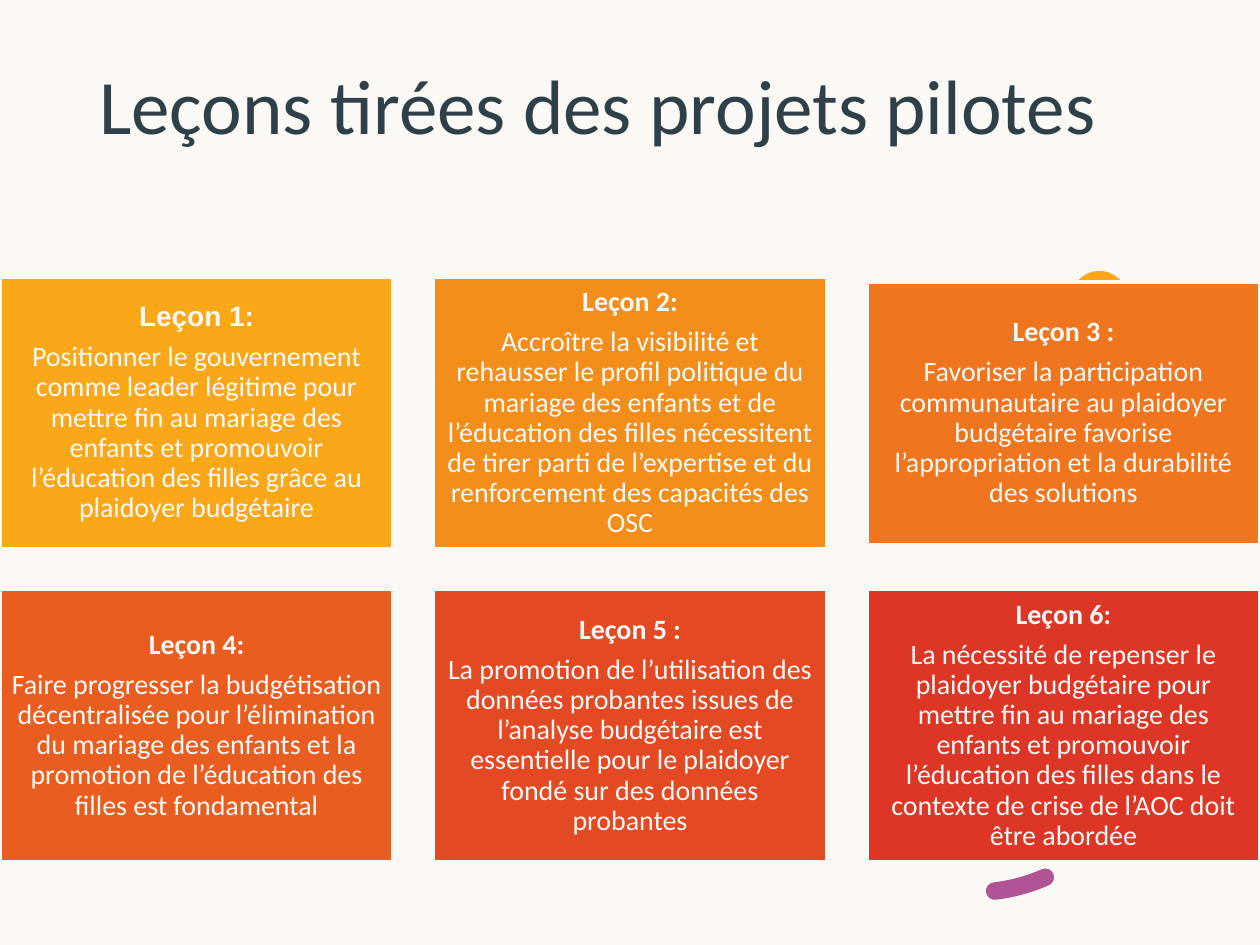
from dataclasses import dataclass

from lxml import etree
from pptx import Presentation
from pptx import util as u
from pptx.dml.color import RGBColor
from pptx.enum import dml, shapes, text
from pptx.oxml.ns import qn


@dataclass(frozen=True)
class Theme:
    """Colours, fonts and type sizes of the slide."""
    background: str = "FAF9F5"
    title: str = "304048"
    arc: str = "AE4C90"
    dot: str = "FAA819"
    font: str = "Calibri"
    title_size: int = 44
    card_size: int = 16
    line_spacing: float = 0.9
    card_spacing: float = 5.6


THEME = Theme()

LESSONS = [
    ("Leçon 1:", "Positionner le gouvernement comme leader légitime pour mettre fin au mariage des enfants "
     "et promouvoir l’éducation des filles grâce au plaidoyer budgétaire", "FAA819", "Arial", 0),
    ("Leçon 2:", "Accroître la visibilité et rehausser le profil politique du mariage des enfants et de "
     "l’éducation des filles nécessitent de tirer parti de l’expertise et du renforcement des capacités "
     "des OSC", "F48E1B", THEME.font, 0),
    ("Leçon 3 :", "Favoriser la participation communautaire au plaidoyer budgétaire favorise "
     "l’appropriation et la durabilité des solutions", "EF751E", THEME.font, 0.04),
    ("Leçon 4:", "Faire progresser la budgétisation décentralisée pour l’élimination du mariage des enfants "
     "et la promotion de l’éducation des filles est fondamental", "E95E20", THEME.font, 0),
    ("Leçon 5 :", "La promotion de l’utilisation des données probantes issues de l’analyse budgétaire est "
     "essentielle pour le plaidoyer fondé sur des données probantes", "E34923", THEME.font, 0),
    ("Leçon 6:", "La nécessité de repenser le plaidoyer budgétaire pour mettre fin au mariage des enfants "
     "et promouvoir l’éducation des filles dans le contexte de crise de l’AOC doit être abordée",
     "DD3626", THEME.font, 0),
]


def inches(box):
    """Turn a box of left, top, width and height into lengths."""
    return [u.Inches(value) for value in box]


def style_paragraph(paragraph, words, size, color, font=THEME.font, bold=False):
    """Fill one paragraph and set its type."""
    paragraph.text = words
    paragraph.line_spacing = THEME.line_spacing
    paragraph.font.name = font
    paragraph.font.size = u.Pt(size)
    paragraph.font.bold = bold
    paragraph.font.color.rgb = RGBColor.from_string(color)


def add_title(slide, box, words):
    """Place the title in its box."""
    frame = slide.shapes.add_textbox(*inches(box)).text_frame
    frame.word_wrap = True
    frame.vertical_anchor = text.MSO_ANCHOR.MIDDLE
    style_paragraph(frame.paragraphs[0], words, THEME.title_size, THEME.title)


def add_decoration(slide, box):
    """Place the dashed arc in its box and the dot near its upper right."""
    left, top, width, height = box
    arc = slide.shapes.add_shape(shapes.MSO_SHAPE.ARC, *inches(box))
    arc.shadow.inherit = False
    arc.adjustments[0], arc.adjustments[1] = 162, 200.931
    arc.rotation = 353.2
    arc.fill.background()
    arc.line.color.rgb = RGBColor.from_string(THEME.arc)
    arc.line.width = u.Pt(10)
    arc.line.dash_style = dml.MSO_LINE.DASH
    properties = arc.element.spPr
    properties.find(qn("a:xfrm")).set("flipV", "1")
    outline = properties.find(qn("a:ln"))
    outline.set("cap", "rnd")
    etree.SubElement(outline.find(".//" + qn("a:srgbClr")), qn("a:alpha")).set("val", "95000")

    dot = slide.shapes.add_shape(
        shapes.MSO_SHAPE.OVAL, *inches((left + 2.72, top + 0.04, 0.55, 0.71)))
    dot.shadow.inherit = False
    dot.fill.solid()
    dot.fill.fore_color.rgb = RGBColor.from_string(THEME.dot)
    dot.line.fill.background()


def add_card(slide, box, heading, body, color, heading_font):
    """Place one lesson card in its box."""
    card = slide.shapes.add_shape(shapes.MSO_SHAPE.RECTANGLE, *inches(box))
    card.shadow.inherit = False
    card.fill.solid()
    card.fill.fore_color.rgb = RGBColor.from_string(color)
    card.line.color.rgb = RGBColor.from_string(THEME.background)
    card.line.width = u.Pt(2)
    frame = card.text_frame
    frame.word_wrap = True
    frame.vertical_anchor = text.MSO_ANCHOR.MIDDLE
    frame.margin_left = frame.margin_right = u.Inches(0.07)
    frame.margin_top = frame.margin_bottom = u.Inches(0.07)
    heading_paragraph, body_paragraph = frame.paragraphs[0], frame.add_paragraph()
    style_paragraph(heading_paragraph, heading, THEME.card_size, THEME.background, heading_font, True)
    style_paragraph(body_paragraph, body, THEME.card_size, THEME.background)
    for paragraph in frame.paragraphs:
        paragraph.alignment = text.PP_ALIGN.CENTER
        paragraph.space_after = u.Pt(THEME.card_spacing)


def add_lessons(slide, box, columns=3, rows=2, gap=0.32):
    """Lay the lesson cards out as a grid in the box."""
    left, top, width, height = box
    card_width = (width - gap * (columns - 1)) / columns
    card_height = (height - gap * (rows - 1)) / rows
    for index, (heading, body, color, font, inset) in enumerate(LESSONS):
        row, column = divmod(index, columns)
        card_box = (left + column * (card_width + gap), top + row * (card_height + gap) + inset,
                    card_width, card_height - 2 * inset)
        add_card(slide, card_box, heading, body, color, font)


def main():
    """Build the slide and save it."""
    presentation = Presentation()
    presentation.slide_width, presentation.slide_height = u.Inches(10), u.Inches(7.5)
    slide = presentation.slides.add_slide(presentation.slide_layouts[6])
    slide.background.fill.solid()
    slide.background.fill.fore_color.rgb = RGBColor.from_string(THEME.background)
    add_title(slide, (0.69, 0.32, 8.62, 1.1), "Leçons tirées des projets pilotes")
    add_decoration(slide, (5.73, 2.11, 3.74, 4.98))
    add_lessons(slide, (0, 2.2, 10, 4.64))
    presentation.save("out.pptx")


if __name__ == "__main__":
    main()
